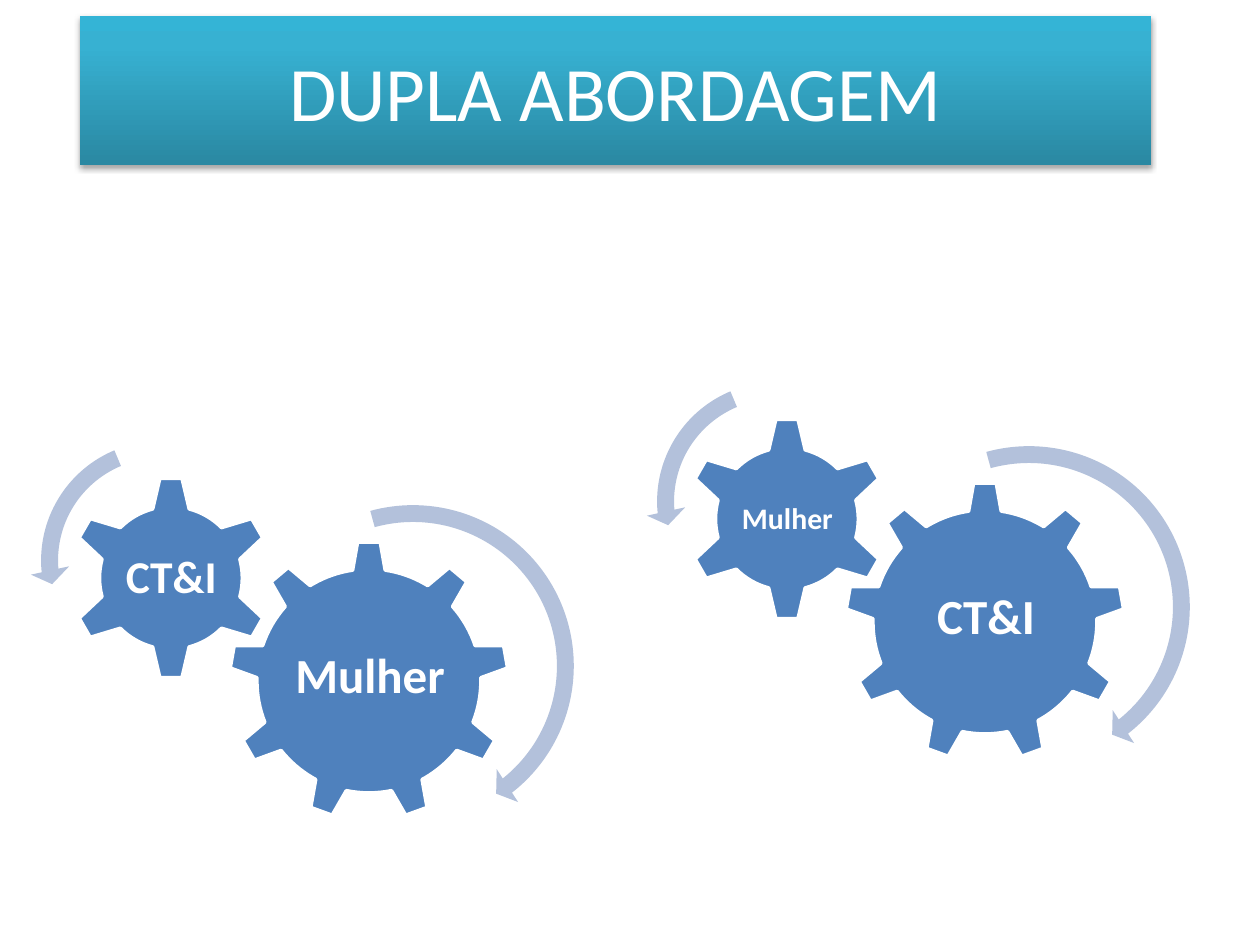
from copy import deepcopy
from dataclasses import dataclass

from lxml.etree import SubElement
from pptx import Presentation
from pptx.dml.color import RGBColor
from pptx.enum.shapes import MSO_SHAPE
from pptx.enum.text import MSO_ANCHOR, PP_ALIGN
from pptx.oxml.ns import qn
from pptx.util import Emu, Pt

FONT = "Calibri"
WHITE, GEAR_BLUE, ARROW_BLUE = "FFFFFF", "4F81BD", "B3C1DB"
TITLE_STOPS = [(0, "2A88A2"), (0.8, "37B1D2"), (1, "34B4D6")]


@dataclass(frozen=True)
class Box:
    x: int
    y: int
    w: int
    h: int

    def emu(self, dx: int = 0, dy: int = 0) -> tuple:
        return px(self.x + dx), px(self.y + dy), px(self.w), px(self.h)


@dataclass(frozen=True)
class Gear:
    preset: MSO_SHAPE
    box: Box
    label_box: Box


@dataclass(frozen=True)
class Arrow:
    preset: MSO_SHAPE
    box: Box
    adjustments: tuple


@dataclass(frozen=True)
class Label:
    text: str
    size: int
    inset: int


@dataclass(frozen=True)
class GearPair:
    x: int
    y: int
    labels: tuple


# Gear and arrow boxes are relative to the top left of their pair.
GEARS = (
    Gear(MSO_SHAPE.GEAR_9, Box(199, 111, 280, 280), Box(256, 176, 168, 144)),
    Gear(MSO_SHAPE.GEAR_6, Box(39, 46, 204, 204), Box(91, 98, 101, 101)),
)
ARROWS = (
    Arrow(MSO_SHAPE.CIRCULAR_ARROW, Box(211, 64, 344, 344),
          (0.049, 3.126, 31.029, 152.762, 0.057)),
    Arrow(MSO_SHAPE.LEFT_CIRCULAR_ARROW, Box(0, 0, 261, 261),
          (0.065, 4.3, 104.891, 148.378, 0.075)),
)
PAIRS = (
    GearPair(646, 371, (Label("CT&I", 28, 5), Label("Mulher", 17, 3))),
    GearPair(30, 430, (Label("Mulher", 28, 5), Label("CT&I", 26, 3))),
)


def px(n: int) -> Emu:
    return Emu(round(n * 914400 / 126))


def rgb(color: str) -> RGBColor:
    return RGBColor.from_string(color)


def add_text(sp, text: str, size: int, bold: bool = False):
    tf = sp.text_frame
    tf.word_wrap = True
    tf.vertical_anchor = MSO_ANCHOR.MIDDLE
    p = tf.paragraphs[0]
    p.alignment = PP_ALIGN.CENTER
    r = p.add_run()
    r.text = text
    r.font.name, r.font.size, r.font.bold = FONT, Pt(size), bold
    r.font.color.rgb = rgb(WHITE)
    return tf


def add_solid(shapes, preset: MSO_SHAPE, position: tuple, color: str):
    sp = shapes.add_shape(preset, *position)
    sp.shadow.inherit = False
    sp.fill.solid()
    sp.fill.fore_color.rgb = rgb(color)
    sp.line.fill.background()
    return sp


def add_gear(shapes, gear: Gear, label: Label, dx: int, dy: int) -> None:
    sp = add_solid(shapes, gear.preset, gear.box.emu(dx, dy), GEAR_BLUE)
    sp.line.color.rgb = rgb(WHITE)
    sp.line.width = Pt(2)
    tb = shapes.add_textbox(*gear.label_box.emu(dx, dy))
    tf = add_text(tb, label.text, label.size, bold=True)
    tf.margin_left = tf.margin_right = px(label.inset)
    tf.margin_top = tf.margin_bottom = px(label.inset)
    tf.paragraphs[0].line_spacing = 0.9


def add_arrow(shapes, arrow: Arrow, dx: int, dy: int) -> None:
    sp = add_solid(shapes, arrow.preset, arrow.box.emu(dx, dy), ARROW_BLUE)
    for i, value in enumerate(arrow.adjustments):
        sp.adjustments[i] = value


def add_pair(s, pair: GearPair) -> None:
    shapes = s.shapes.add_group_shape().shapes
    for gear, label in zip(GEARS, pair.labels):
        add_gear(shapes, gear, label, pair.x, pair.y)
    for arrow in ARROWS:
        add_arrow(shapes, arrow, pair.x, pair.y)


def add_shadow(sp) -> None:
    """Give the shape a soft black shadow straight below it."""
    sp.shadow.inherit = False
    effects = sp._element.spPr.find(qn("a:effectLst"))
    shadow = SubElement(effects, qn("a:outerShdw"), blurRad=str(Pt(3.1)),
                        dist=str(Pt(1.8)), dir="5400000", rotWithShape="0")
    black = SubElement(shadow, qn("a:srgbClr"), val="000000")
    SubElement(black, qn("a:alpha"), val="35000")


def add_title(s, text: str) -> None:
    sp = s.shapes.add_shape(MSO_SHAPE.RECTANGLE, *Box(80, 16, 1071, 149).emu())
    sp.line.fill.background()
    sp.fill.gradient()
    sp.fill.gradient_angle = 90
    stop_list = sp._element.spPr.find(".//" + qn("a:gsLst"))
    stop_list.append(deepcopy(stop_list[0]))
    for stop, (position, color) in zip(sp.fill.gradient_stops, TITLE_STOPS):
        stop.position = position
        stop.color.rgb = rgb(color)
    add_shadow(sp)
    add_text(sp, text, 44)


def main() -> None:
    prs = Presentation()
    prs.slide_width, prs.slide_height = px(1260), px(945)
    s = prs.slides.add_slide(prs.slide_layouts[6])
    add_title(s, "DUPLA ABORDAGEM")
    for pair in PAIRS:
        add_pair(s, pair)
    prs.save("out.pptx")


if __name__ == "__main__":
    main()
